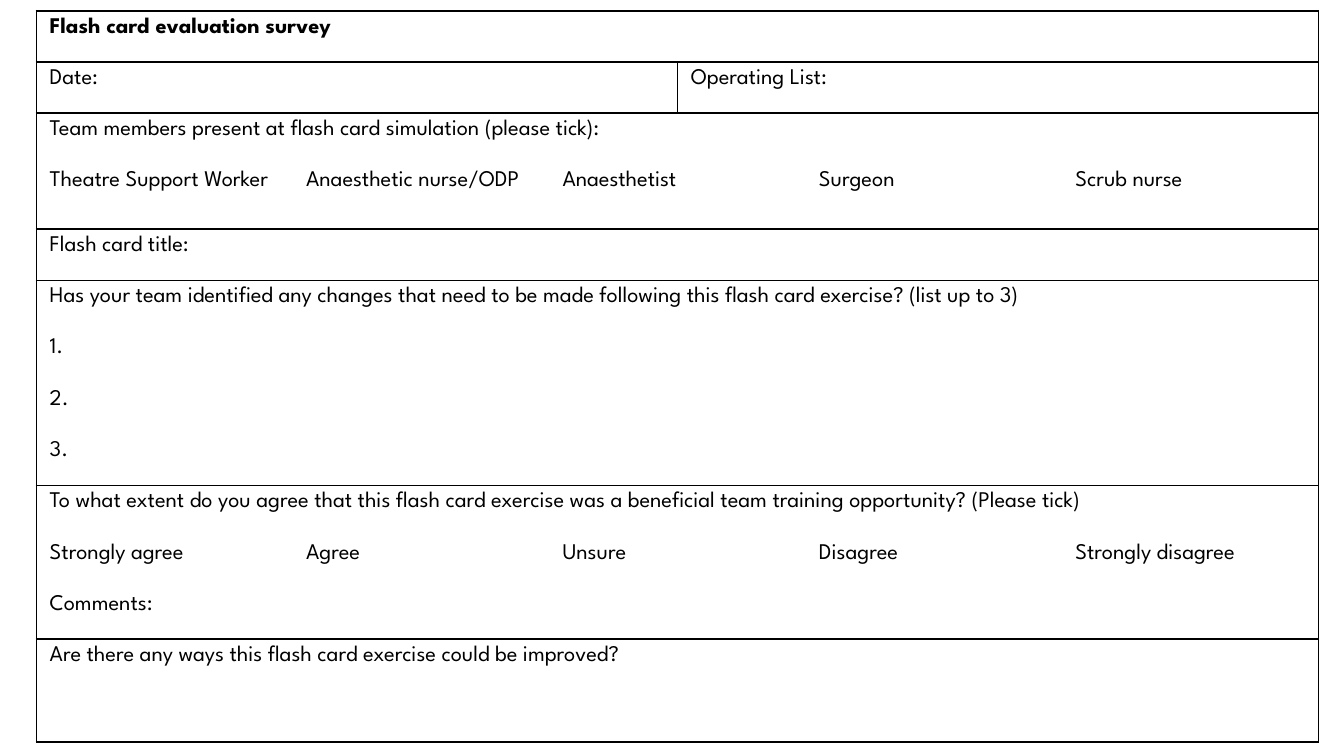
from lxml.etree import SubElement
from pptx import Presentation
from pptx.dml.color import RGBColor
from pptx.oxml.ns import qn
from pptx.util import Inches, Pt

BLACK, WHITE = "000000", "FFFFFF"
WIDTH = 9.54
COLUMN = WIDTH / 5
COLUMNS = [COLUMN, COLUMN, COLUMN / 2, COLUMN / 2, COLUMN, COLUMN]
ROW, TALL_ROW = 4.96 / 13, 0.48
FULL, HALVES, OPTIONS = [6], [3, 3], [1, 1, 2, 1, 1]

# Each section is a ruled box of rows; a row is (column spans, texts)
SECTIONS = [
    [(FULL, ["Flash card evaluation survey"])],
    [(HALVES, ["Date:", "Operating List:"])],
    [(FULL, ["Team members present at flash card simulation (please tick):"]),
     (OPTIONS, ["Theatre Support Worker", "Anaesthetic nurse/ODP", "Anaesthetist",
                "Surgeon", "Scrub nurse"])],
    [(FULL, ["Flash card title:"])],
    [(FULL, ["Has your team identified any changes that need to be made "
             "following this flash card exercise? (list up to 3)"]),
     (FULL, ["1."]),
     (FULL, ["2."]),
     (FULL, ["3."])],
    [(FULL, ["To what extent do you agree that this flash card exercise was "
             "a beneficial team training opportunity? (Please tick)"]),
     (OPTIONS, ["Strongly agree", "Agree", "Unsure", "Disagree", "Strongly disagree"]),
     (FULL, ["Comments:"])],
    [(FULL, ["Are there any ways this flash card exercise could be improved?"]),
     (FULL, [""])],
]


def rgb(value):
    return RGBColor.from_string(value)


class Form:
    font, size = "League Spartan", 12

    def __init__(self, slide):
        self.slide = slide

    def table(self, left, top, columns, rows):
        frame = self.slide.shapes.add_table(
            len(rows), len(columns), Inches(left), Inches(top),
            Inches(sum(columns)), Inches(sum(rows)))
        table = frame.table
        table.first_row = table.horz_banding = False
        for column, width in zip(table.columns, columns):
            column.width = Inches(width)
        for row, height in zip(table.rows, rows):
            row.height = Inches(height)
        return table

    def borders(self, cell, edges):
        tcPr = cell._tc.get_or_add_tcPr()
        for edge in "LRTB":
            ln = SubElement(tcPr, qn(f"a:ln{edge}"), w=str(Pt(1)))
            if edge in edges:
                fill = SubElement(ln, qn("a:solidFill"))
                SubElement(fill, qn("a:srgbClr"), val=BLACK)
            else:
                SubElement(ln, qn("a:noFill"))

    def text(self, cell, text, bold):
        p = cell.text_frame.paragraphs[0]
        if not text:
            SubElement(p._p, qn("a:endParaRPr"), sz=str(self.size * 100))
            return
        p.text = text
        font = p.runs[0].font
        font.name, font.size, font.bold = self.font, Pt(self.size), bold
        font.color.rgb = rgb(BLACK)

    def cell(self, table, row, col, span, text, edges, bold):
        origin = table.cell(row, col)
        for i in range(col, col + span):
            part = table.cell(row, i)
            # The first part of a merged cell carries all of its edges
            hidden = "" if i == col else "L" if i == col + span - 1 else "LR"
            self.borders(part, edges - set(hidden))
            part.fill.solid()
            part.fill.fore_color.rgb = rgb(WHITE)
        if span > 1:
            origin.merge(table.cell(row, col + span - 1))
        self.text(origin, text, bold)


def main():
    prs = Presentation()
    prs.slide_width = Inches(10)
    prs.slide_height = prs.slide_width * 9 // 16
    form = Form(prs.slides.add_slide(prs.slide_layouts[6]))

    # Grid: even rows, with a taller one for the team members
    heights = [ROW] * sum(len(section) for section in SECTIONS)
    heights[3] = TALL_ROW
    table = form.table(0.27, 0.08, COLUMNS, heights)

    # Sections, each ruled around its outside
    row = 0
    for section in SECTIONS:
        for i, (spans, texts) in enumerate(section):
            col = 0
            for span, text in zip(spans, texts):
                edges = set()
                if i == 0:
                    edges.add("T")
                if i == len(section) - 1:
                    edges.add("B")
                if col == 0 or spans is HALVES:
                    edges.add("L")
                if col + span == len(COLUMNS) or spans is HALVES:
                    edges.add("R")
                form.cell(table, row, col, span, text, edges, bold=row == 0)
                col += span
            row += 1

    prs.save("out.pptx")


if __name__ == "__main__":
    main()
